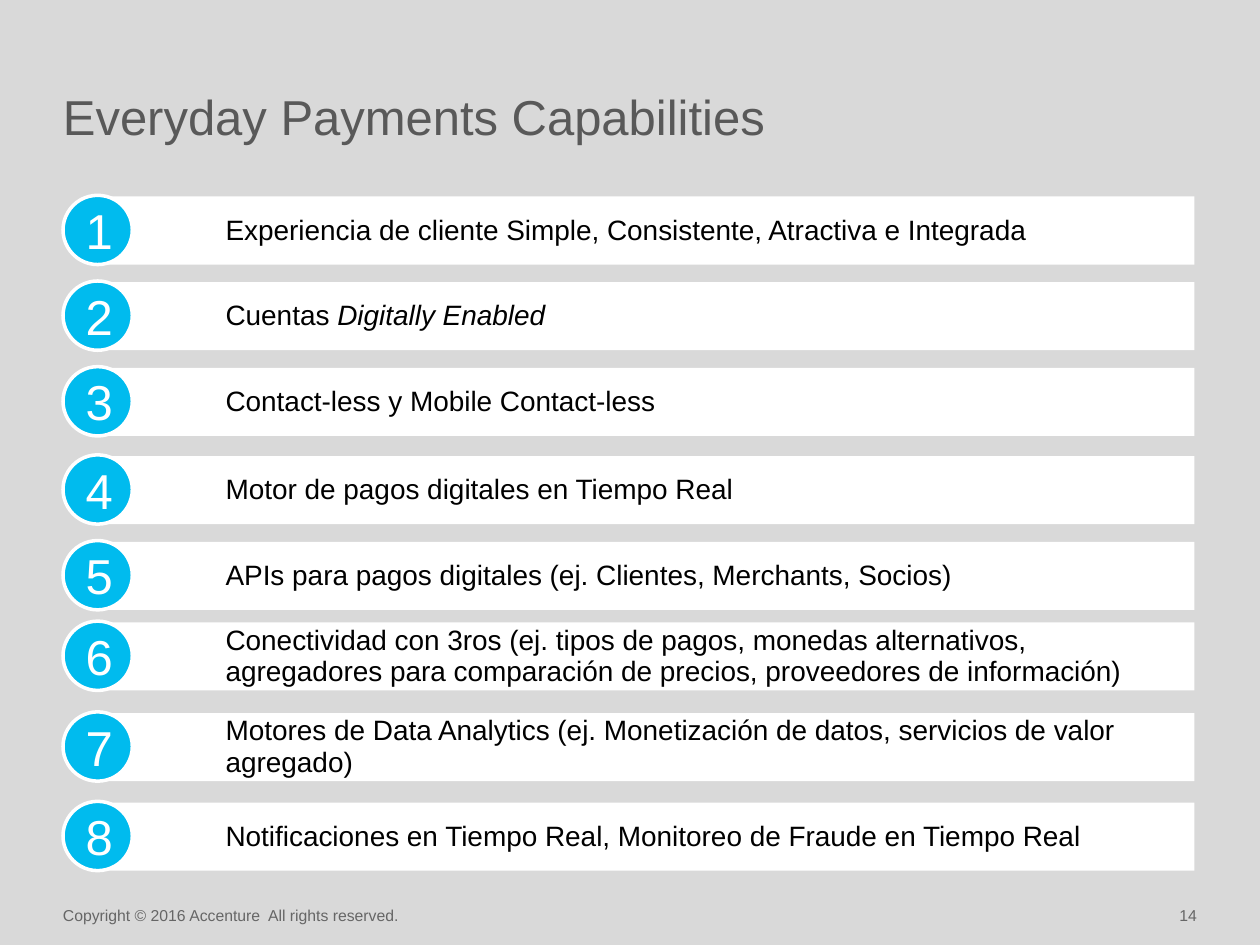
"""Build the Everyday Payments Capabilities slide."""
from dataclasses import dataclass

import pptx
import pptx.dml.color
import pptx.enum.shapes
import pptx.enum.text
import pptx.util

Inches = pptx.util.Inches
Shape = pptx.enum.shapes.MSO_SHAPE
Align = pptx.enum.text.PP_ALIGN
Anchor = pptx.enum.text.MSO_ANCHOR

BAR_HEIGHT = 0.54
CIRCLE_SIZE = 0.55


@dataclass
class Capability:
    top: float
    text: str
    emphasis: str = ""


CAPABILITIES = [
    Capability(1.56, "Experiencia de cliente Simple, Consistente, Atractiva e Integrada"),
    Capability(2.24, "Cuentas ", "Digitally Enabled"),
    Capability(2.92, "Contact-less y Mobile Contact-less"),
    Capability(3.62, "Motor de pagos digitales en Tiempo Real"),
    Capability(4.30, "APIs para pagos digitales (ej. Clientes, Merchants, Socios)"),
    Capability(4.94, "Conectividad con 3ros (ej. tipos de pagos, monedas alternativos, "
                     "agregadores para comparación de precios, proveedores de información)"),
    Capability(5.66, "Motores de Data Analytics (ej. Monetización de datos, servicios de valor agregado)"),
    Capability(6.37, "Notificaciones en Tiempo Real, Monitoreo de Fraude en Tiempo Real"),
]


def colour(value: str) -> pptx.dml.color.RGBColor:
    return pptx.dml.color.RGBColor.from_string(value)


def write(box, text: str, *, size: float, fill: str, emphasis: str = "", align=Align.LEFT,
          anchor=Anchor.MIDDLE, insets=(0, 0, 0, 0), line_spacing: float = 1.0) -> None:
    frame = box.text_frame
    frame.word_wrap = True
    frame.vertical_anchor = anchor
    frame.margin_left, frame.margin_top, frame.margin_right, frame.margin_bottom = map(Inches, insets)
    para = frame.paragraphs[0]
    para.alignment = align
    para.line_spacing = line_spacing
    for content, italic in ((text, False), (emphasis, True)):
        if content:
            span = para.add_run()
            span.text = content
            span.font.name = "Arial"
            span.font.size = pptx.util.Pt(size)
            span.font.italic = italic
            span.font.color.rgb = colour(fill)


def add_box(shapes, left: float, top: float, width: float, height: float):
    return shapes.add_textbox(Inches(left), Inches(top), Inches(width), Inches(height))


def add_shape(shapes, kind, left: float, top: float, width: float, height: float, fill: str):
    shape = shapes.add_shape(kind, Inches(left), Inches(top), Inches(width), Inches(height))
    shape.shadow.inherit = False
    shape.fill.solid()
    shape.fill.fore_color.rgb = colour(fill)
    shape.line.fill.background()
    return shape


def add_capability(page, number: int, item: Capability) -> None:
    shapes = page.shapes.add_group_shape().shapes
    add_shape(shapes, Shape.RECTANGLE, 0.83, item.top, 8.65, BAR_HEIGHT, "FFFFFF")
    circle = add_shape(shapes, Shape.OVAL, 0.5, item.top - 0.01, CIRCLE_SIZE, CIRCLE_SIZE, "00BBEE")
    circle.line.color.rgb = colour("FFFFFF")
    circle.line.width = pptx.util.Pt(2)
    write(circle, str(number), size=28, fill="FFFFFF", align=Align.CENTER,
          insets=(0.1, 0.05, 0.1, 0.05))
    label = add_box(shapes, 1.79, item.top, 7.29, BAR_HEIGHT)
    write(label, item.text, emphasis=item.emphasis, size=16, fill="000000", line_spacing=0.95)


def main() -> None:
    deck = pptx.Presentation()
    deck.slide_width, deck.slide_height = Inches(10), Inches(7.5)
    page = deck.slides.add_slide(deck.slide_layouts[6])
    page.background.fill.solid()
    page.background.fill.fore_color.rgb = colour("D9D9D9")

    title = add_box(page.shapes, 0.5, 0.05, 9, 1.1)
    write(title, "Everyday Payments Capabilities", size=28, fill="595959",
          anchor=Anchor.BOTTOM, insets=(0, 0.05, 0, 0))
    for number, item in enumerate(CAPABILITIES, start=1):
        add_capability(page, number, item)
    copyright_line = add_box(page.shapes, 0.5, 7.19, 4.44, 0.14)
    write(copyright_line, "Copyright © 2016 Accenture  All rights reserved.", size=9,
          fill="666666", insets=(0, 0.05, 0.1, 0.05))
    page_number = add_box(page.shapes, 8.9, 7.19, 0.6, 0.14)
    write(page_number, "14", size=9, fill="666666", align=Align.RIGHT, insets=(0.1, 0.05, 0, 0.05))
    deck.save("out.pptx")


if __name__ == "__main__":
    main()
